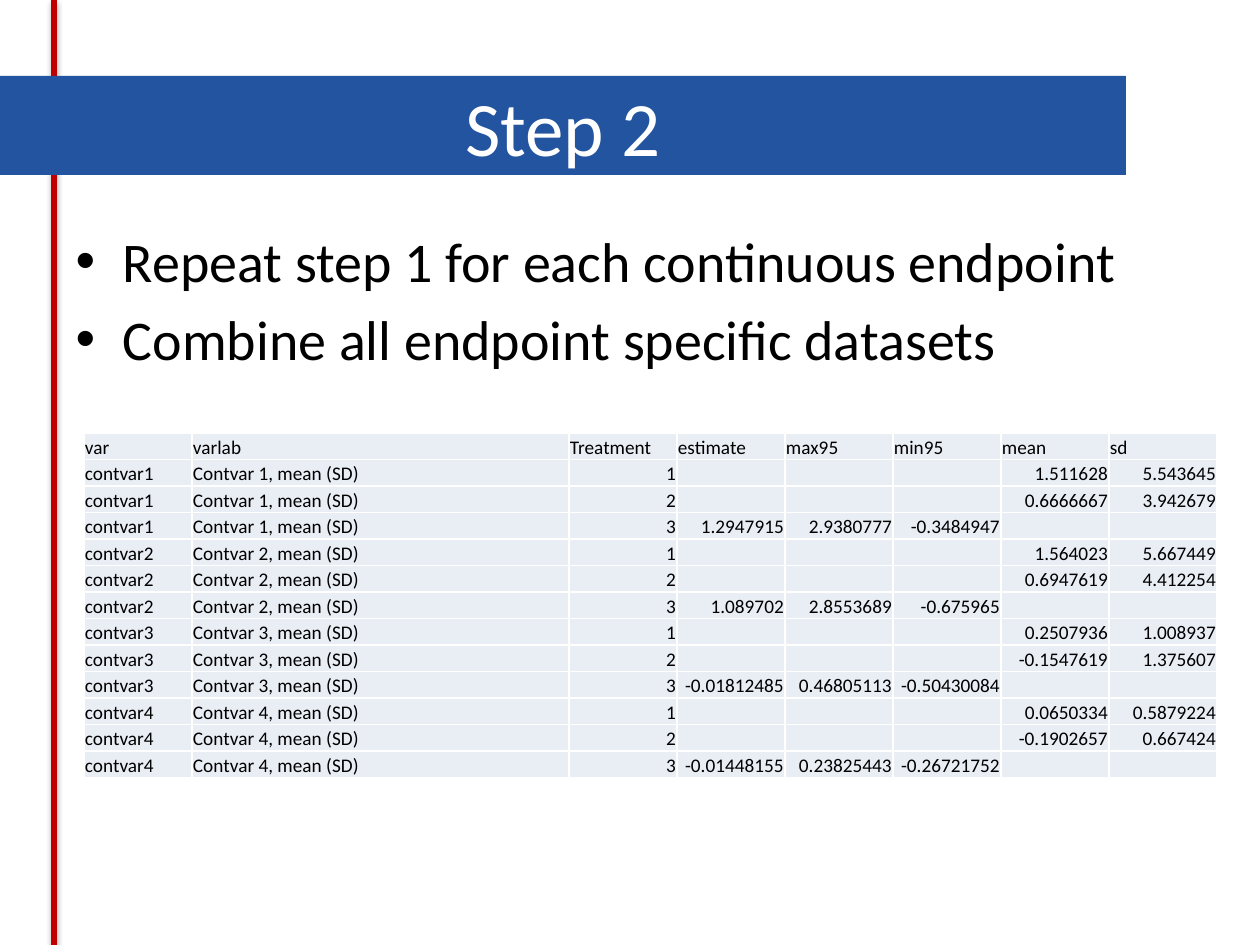
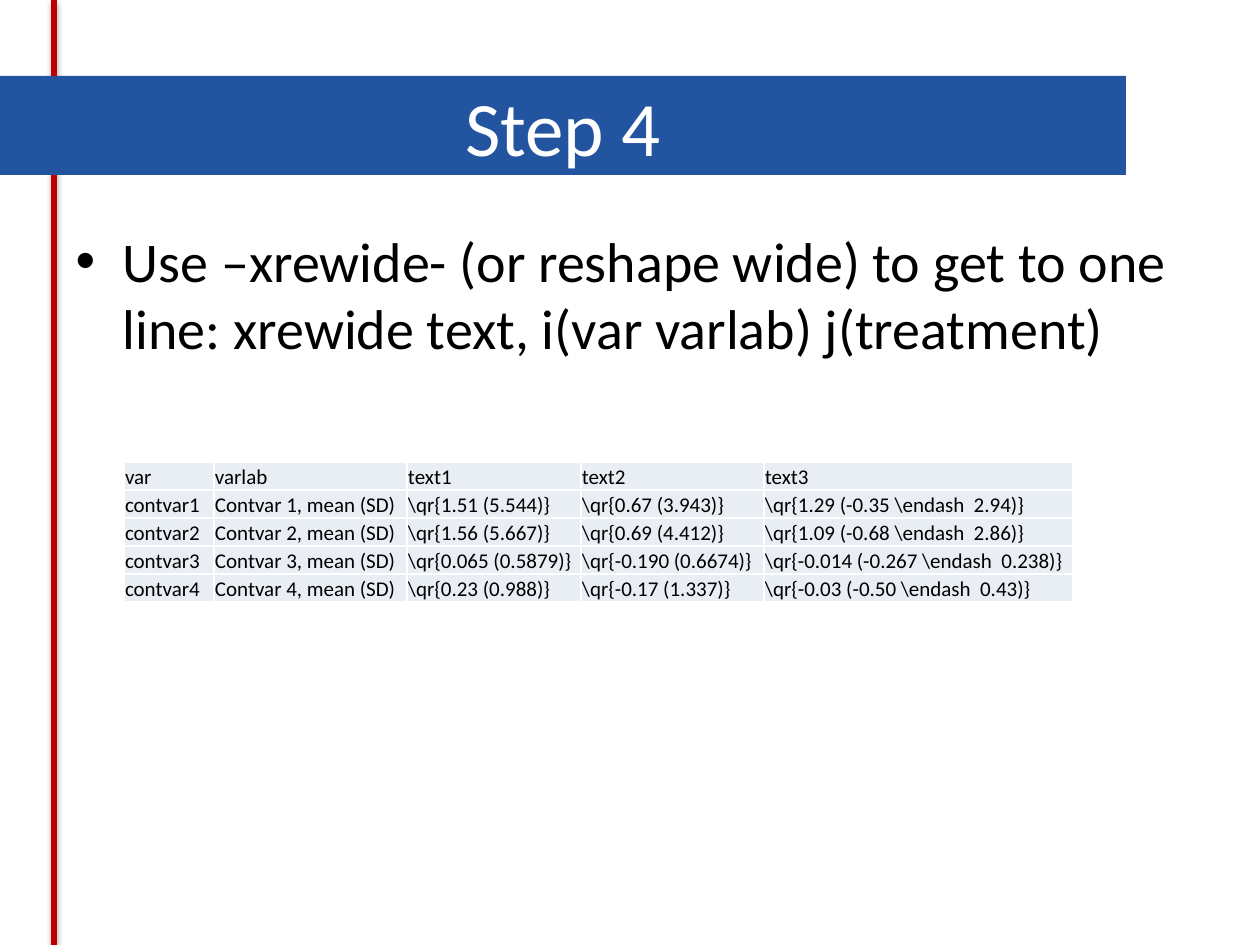
from lxml import etree
from pptx import Presentation
from pptx.dml.color import RGBColor
from pptx.enum.shapes import MSO_CONNECTOR
from pptx.enum.text import MSO_ANCHOR, MSO_AUTO_SIZE, PP_ALIGN
from pptx.oxml import parse_xml
from pptx.oxml.ns import nsdecls, qn
from pptx.util import Pt

RED = RGBColor(0xC0, 0x00, 0x00)
BLUE = RGBColor(0x22, 0x54, 0x9F)
PALE = RGBColor(0xE9, 0xED, 0xF4)
WHITE = RGBColor(0xFF, 0xFF, 0xFF)
BLACK = RGBColor(0x00, 0x00, 0x00)
FONT = "Calibri"
SLIDE_W, SLIDE_H = 1260, 945
RULE_X = 54
TITLE_BOX = (0, 76, 1126, 99)
BODY_BOX = (63, 220, 1134, 624)

RULE_SHADOW = (
    f'<a:effectLst {nsdecls("a")}>'
    '<a:outerShdw blurRad="40000" dist="23000" dir="5400000" rotWithShape="0">'
    '<a:srgbClr val="000000"><a:alpha val="35000"/></a:srgbClr>'
    '</a:outerShdw></a:effectLst>'
)

ESTIMATES_HEADER = ("var", "varlab", "Treatment", "estimate", "max95", "min95", "mean", "sd")
ENDPOINTS = (
    (("1.511628", "5.543645"), ("0.6666667", "3.942679"),
     ("1.2947915", "2.9380777", "-0.3484947")),
    (("1.564023", "5.667449"), ("0.6947619", "4.412254"),
     ("1.089702", "2.8553689", "-0.675965")),
    (("0.2507936", "1.008937"), ("-0.1547619", "1.375607"),
     ("-0.01812485", "0.46805113", "-0.50430084")),
    (("0.0650334", "0.5879224"), ("-0.1902657", "0.667424"),
     ("-0.01448155", "0.23825443", "-0.26721752")),
)
WIDE_HEADER = ("var", "varlab", "text1", "text2", "text3")
WIDE_TEXTS = (
    (r"\qr{1.51 (5.544)}", r"\qr{0.67 (3.943)}", r"\qr{1.29 (-0.35 \endash  2.94)}"),
    (r"\qr{1.56 (5.667)}", r"\qr{0.69 (4.412)}", r"\qr{1.09 (-0.68 \endash  2.86)}"),
    (r"\qr{0.065 (0.5879)}", r"\qr{-0.190 (0.6674)}", r"\qr{-0.014 (-0.267 \endash  0.238)}"),
    (r"\qr{0.23 (0.988)}", r"\qr{-0.17 (1.337)}", r"\qr{-0.03 (-0.50 \endash  0.43)}"),
)


def px(n):
    return round(n * 914400 / 126)


def place(sp, box):
    sp.left, sp.top, sp.width, sp.height = map(px, box)


def style_runs(p, size, color):
    for r in p.runs:
        r.font.name = FONT
        r.font.size = Pt(size)
        r.font.color.rgb = color


def add_rule(slide):
    sp = slide.shapes.add_connector(MSO_CONNECTOR.STRAIGHT, px(RULE_X), 0, px(RULE_X), px(SLIDE_H))
    sp.line.color.rgb = RED
    sp.line.width = Pt(3)
    sp._element.spPr.append(parse_xml(RULE_SHADOW))
    slide.shapes._spTree.insert(2, sp._element)


def fill_title(slide, box, text):
    sp = slide.shapes.title
    place(sp, box)
    sp.fill.solid()
    sp.fill.fore_color.rgb = BLUE
    tf = sp.text_frame
    tf.text = text
    tf.auto_size = MSO_AUTO_SIZE.NONE
    tf.vertical_anchor = MSO_ANCHOR.MIDDLE
    p = tf.paragraphs[0]
    p.alignment = PP_ALIGN.CENTER
    style_runs(p, 44, WHITE)


def fill_body(slide, box, bullets):
    sp = slide.placeholders[1]
    place(sp, box)
    tf = sp.text_frame
    tf.text = "\n".join(bullets)
    tf.auto_size = MSO_AUTO_SIZE.NONE
    tf.paragraphs[0].space_before = Pt(0)
    for p in tf.paragraphs:
        style_runs(p, 32, BLACK)


def fill_cell(cell, text, size):
    cell.fill.solid()
    cell.fill.fore_color.rgb = PALE
    cell.vertical_anchor = MSO_ANCHOR.BOTTOM
    cell.margin_left = cell.margin_top = cell.margin_right = px(1)
    cell.margin_bottom = 0
    p = cell.text_frame.paragraphs[0]
    if not text:
        etree.SubElement(p._p, qn("a:endParaRPr"), sz=str(size * 100))
        return
    p.text = text
    if text.lstrip("-")[0].isdigit():
        p.alignment = PP_ALIGN.RIGHT
    style_runs(p, size, BLACK)


def add_data_table(slide, box, col_widths, rows, size):
    x, y, w, h = map(px, box)
    table = slide.shapes.add_table(len(rows), len(col_widths), x, y, w, h).table
    table.first_row = table.horz_banding = False
    for column, width in zip(table.columns, col_widths):
        column.width = px(width)
    for row, texts in zip(table.rows, rows):
        row.height = h // len(rows)
        for cell, text in zip(row.cells, texts):
            fill_cell(cell, text, size)


def endpoint_names(number):
    return f"contvar{number}", f"Contvar {number}, mean (SD)"


def estimate_rows():
    rows = [ESTIMATES_HEADER]
    for number, treatments in enumerate(ENDPOINTS, 1):
        for treatment, values in enumerate(treatments, 1):
            cells = values + ("", "") if treatment == 3 else ("", "", "") + values
            rows.append((*endpoint_names(number), str(treatment), *cells))
    return rows


def wide_rows():
    return [WIDE_HEADER] + [(*endpoint_names(n), *texts) for n, texts in enumerate(WIDE_TEXTS, 1)]


def add_step_slide(prs, title, bullets, table_box, col_widths, rows, size):
    slide = prs.slides.add_slide(prs.slide_layouts[1])
    add_rule(slide)
    fill_title(slide, TITLE_BOX, title)
    fill_body(slide, BODY_BOX, bullets)
    add_data_table(slide, table_box, col_widths, rows, size)


def main():
    prs = Presentation()
    prs.slide_width, prs.slide_height = px(SLIDE_W), px(SLIDE_H)
    add_step_slide(
        prs, "Step 2",
        ["Repeat step 1 for each continuous endpoint", "Combine all endpoint specific datasets"],
        (84, 433, 1133, 345), [108, 377] + [108] * 6, estimate_rows(), 11)
    add_step_slide(
        prs, "Step 4",
        ["Use –xrewide- (or reshape wide) to get to one line: "
         "xrewide text, i(var varlab) j(treatment)"],
        (124, 462, 949, 140), [90, 193, 174, 183, 309], wide_rows(), 12)
    prs.save("out.pptx")


if __name__ == "__main__":
    main()
